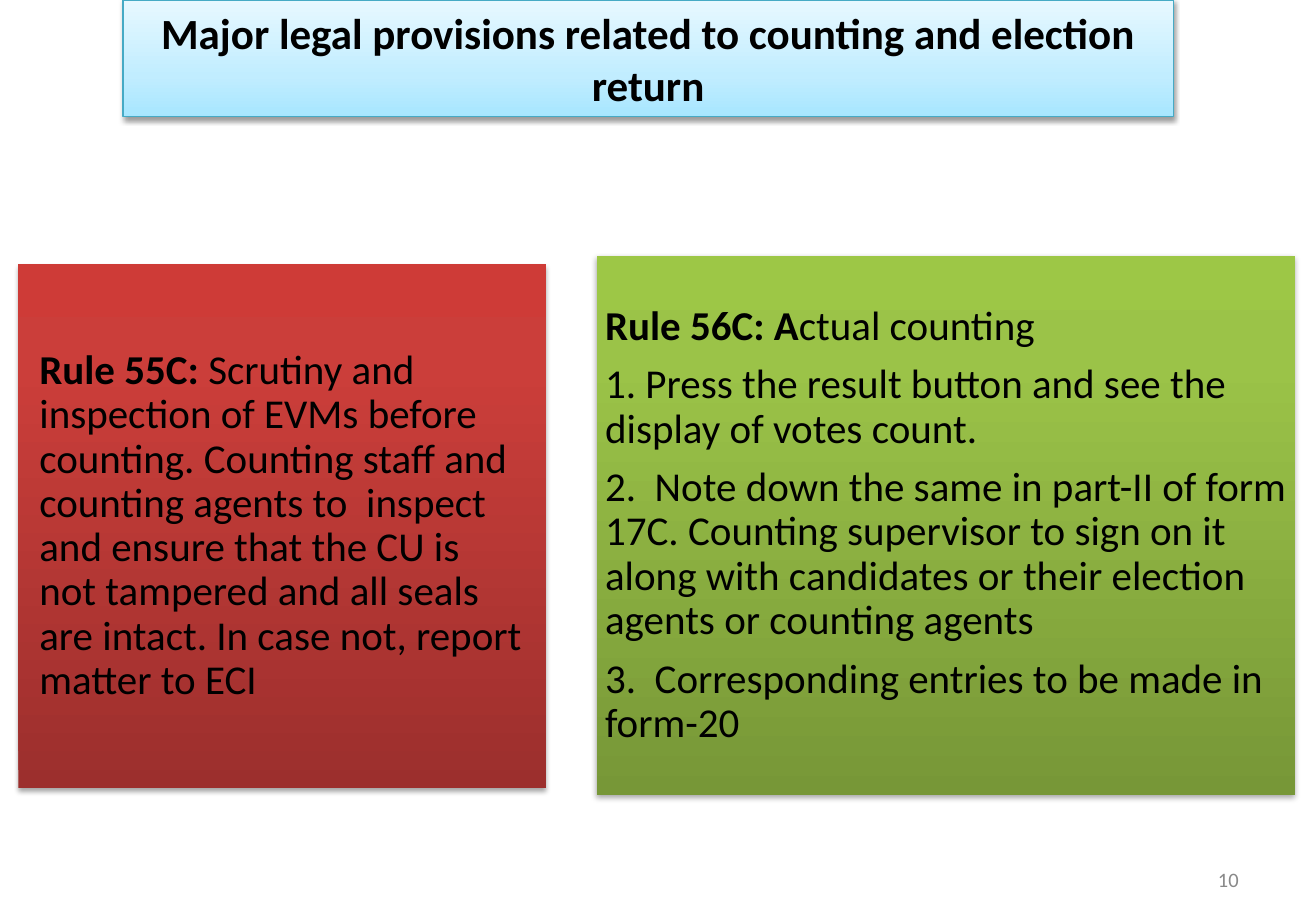
from lxml import etree
from pptx import Presentation
from pptx import util as u
from pptx.dml.color import RGBColor
from pptx.enum import text
from pptx.oxml import ns

COLORS = {
    "text": "000000", "number": "898989", "title_line": "46AAC5",
    "blue": ["A7E6FF", "C1EDFF", "E7F8FF"],
    "red": ["9C2F2D", "CB3E3A", "CE3B37"],
    "green": ["779737", "9BC348", "9DC746"],
}


class Deck:
    """Slide style and the current slide."""
    font = "Calibri"

    def __init__(self, prs):
        self.s = prs.slides.add_slide(prs.slide_layouts[3])

    def place(self, sp, box, inset=(0.1, 0.05)):
        sp.left, sp.top, sp.width, sp.height = map(u.Inches, box)
        tf = sp.text_frame
        tf.word_wrap = True
        tf.auto_size = text.MSO_AUTO_SIZE.NONE
        tf.vertical_anchor = text.MSO_ANCHOR.MIDDLE
        tf.margin_left = tf.margin_right = u.Inches(inset[0])
        tf.margin_top = tf.margin_bottom = u.Inches(inset[1])
        return tf

    def run(self, p, words, size, bold=False, color="text"):
        r = p.add_run()
        r.text = words
        r.font.name, r.font.size, r.font.bold = self.font, u.Pt(size), bold
        r.font.color.rgb = RGBColor.from_string(COLORS[color])

    def gradient(self, sp, color, middle):
        sp.fill.gradient()
        sp.fill.gradient_angle = 90
        stops = sp._element.spPr.find(".//" + ns.qn("a:gsLst"))
        for old in list(stops):
            stops.remove(old)
        for pos, value in zip((0, middle, 100), COLORS[color]):
            gs = etree.SubElement(stops, ns.qn("a:gs"), pos=str(pos * 1000))
            etree.SubElement(gs, ns.qn("a:srgbClr"), val=value)

    def shadow(self, sp, alpha, dist):
        sp.shadow.inherit = False
        effects = sp._element.spPr.find(ns.qn("a:effectLst"))
        outer = etree.SubElement(
            effects, ns.qn("a:outerShdw"), blurRad=str(u.Pt(3.1)),
            dist=str(u.Pt(dist)), dir="5400000", rotWithShape="0")
        clr = etree.SubElement(outer, ns.qn("a:srgbClr"), val="000000")
        etree.SubElement(clr, ns.qn("a:alpha"), val=str(alpha * 1000))

    def title(self, words, box):
        sp = self.s.shapes.title
        p = self.place(sp, box).paragraphs[0]
        p.alignment = text.PP_ALIGN.CENTER
        self.run(p, words, 25.2, bold=True)
        self.gradient(sp, "blue", 35)
        sp.line.color.rgb = RGBColor.from_string(COLORS["title_line"])
        sp.line.width = u.Pt(0.75)
        self.shadow(sp, 38, 1.6)

    def panel(self, idx, box, color, inset, paragraphs):
        sp = self.s.placeholders[idx]
        tf = self.place(sp, box, (inset, inset))
        for i, (lead, words) in enumerate(paragraphs):
            p = tf.paragraphs[0] if i == 0 else tf.add_paragraph()
            pPr = p._p.get_or_add_pPr()
            pPr.set("marL", "0")
            pPr.set("indent", "0")
            etree.SubElement(pPr, ns.qn("a:buNone"))
            p.alignment = text.PP_ALIGN.LEFT
            p.line_spacing = 0.9
            p.space_before = u.Pt(8.4 if i else 0)
            p.space_after = u.Pt(0)
            if lead:
                self.run(p, lead, 24, bold=True)
            self.run(p, words, 24)
        self.gradient(sp, color, 80)
        self.shadow(sp, 35, 1.8)

    def page_number(self, words, box):
        sp = self.s.shapes.add_textbox(*map(u.Inches, box))
        p = self.place(sp, box).paragraphs[0]
        p.alignment = text.PP_ALIGN.RIGHT
        self.run(p, words, 12, color="number")


def main():
    prs = Presentation()
    prs.slide_width, prs.slide_height = u.Inches(10.7), u.Inches(7.5)
    deck = Deck(prs)

    # Title banner
    deck.title("Major legal provisions related to counting and election return",
               (1, 0, 8.54, 0.95))

    # Scrutiny before counting
    deck.panel(1, (0.15, 2.15, 4.29, 4.26), "red", 0.17, [
        ("Rule 55C: ",
         "Scrutiny and inspection of EVMs before counting. Counting staff and "
         "counting agents to  inspect and ensure that the CU is not tampered "
         "and all seals are intact. In case not, report matter to ECI"),
    ])

    # Counting steps
    deck.panel(2, (4.85, 2.08, 5.68, 4.39), "green", 0.07, [
        ("Rule 56C: A", "ctual counting"),
        ("", "1. Press the result button and see the display of votes count."),
        ("", "2.  Note down the same in part-II of form 17C. Counting supervisor "
             "to sign on it along with candidates or their election agents or "
             "counting agents"),
        ("", "3.  Corresponding entries to be made in form-20"),
    ])

    # Page number
    deck.page_number("10", (7.67, 6.95, 2.5, 0.4))
    prs.save("out.pptx")


if __name__ == "__main__":
    main()
